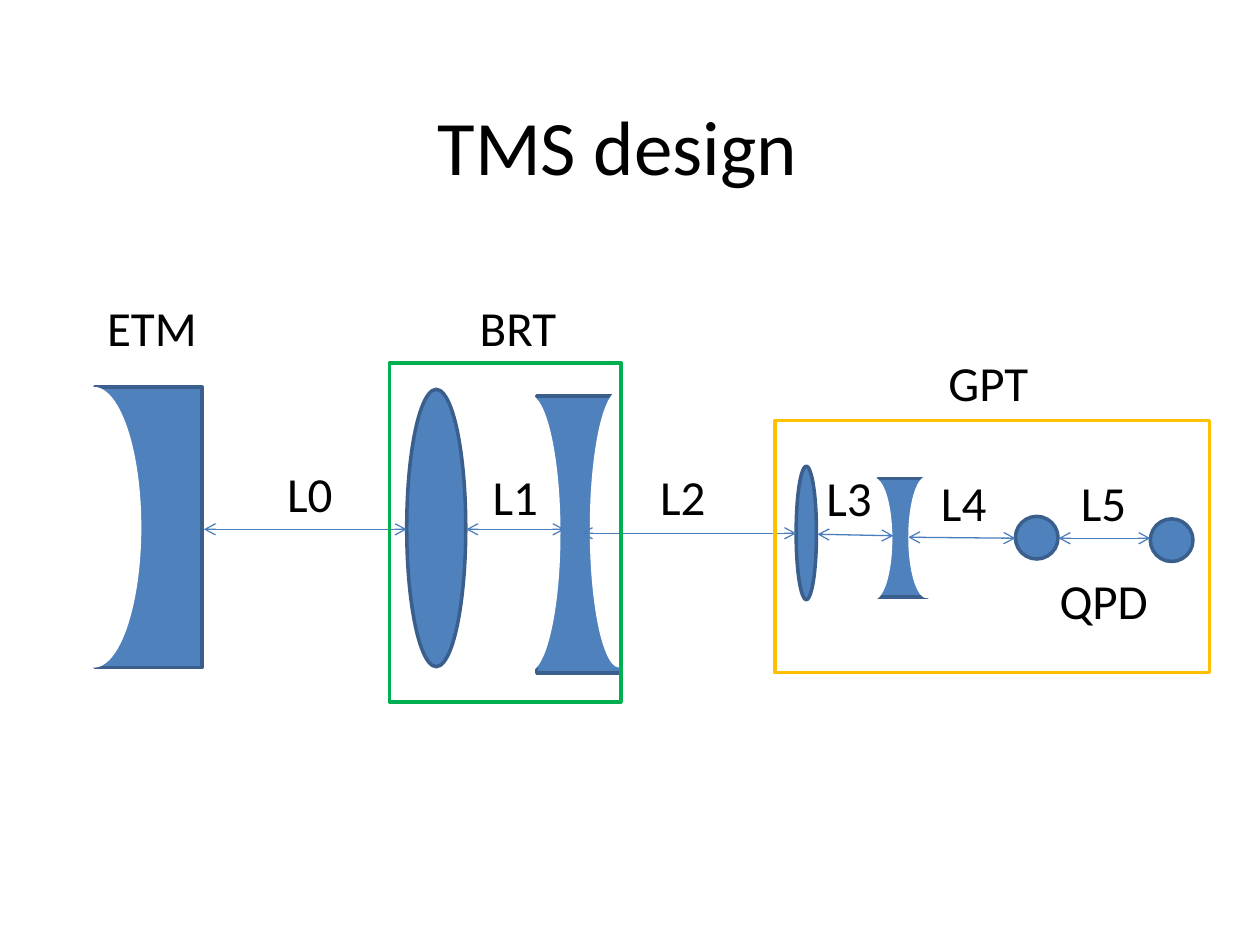
"""Build the TMS design slide: an optical layout with its telescopes and distances."""
from dataclasses import dataclass
from typing import NamedTuple, Optional

from lxml.etree import SubElement
from pptx import Presentation
from pptx.dml.color import RGBColor
from pptx.enum.shapes import MSO_CONNECTOR, MSO_SHAPE as Shape
from pptx.enum.text import MSO_ANCHOR, PP_ALIGN
from pptx.oxml.ns import qn
from pptx.util import Cm, Pt


@dataclass(frozen=True)
class Theme:
    font: str = "Calibri"
    title_size: float = 44
    label_size: float = 28
    outline: float = 2
    arrow_width: float = 0.75
    text: str = "000000"
    background: str = "FFFFFF"
    glass: str = "4F81BD"
    edge: str = "3A5F8C"
    arrow: str = "4B7EBC"
    brt: str = "00B050"
    gpt: str = "FFC000"


class Box(NamedTuple):
    left: float
    top: float
    width: float
    height: float


class Arrow(NamedTuple):
    x1: float
    y1: float
    x2: float
    y2: float


class Label(NamedTuple):
    text: str
    left: float
    top: float
    width: float = 1.45


class Mirror(NamedTuple):
    body: Box
    hollows: tuple[Box, ...]


THEME = Theme()
LABEL_HEIGHT = 1.45
MIRRORS = (
    Mirror(Box(1.91, 7.8, 2.16, 5.66), (Box(0.94, 7.8, 1.91, 5.66),)),
    Mirror(Box(10.82, 7.98, 1.7, 5.59),
           (Box(11.89, 7.87, 1.19, 5.59), Box(10.03, 7.95, 1.27, 5.59))),
    Mirror(Box(17.7, 9.65, 0.99, 2.39),
           (Box(18.31, 9.6, 0.74, 2.46), Box(17.25, 9.63, 0.74, 2.46))),
)
LENSES = (
    Box(8.2, 7.85, 1.19, 5.59),
    Box(16.05, 9.4, 0.41, 2.69),
    Box(20.47, 10.41, 0.86, 0.86),
    Box(23.19, 10.46, 0.86, 0.86),
)
ARROWS = (
    Arrow(4.11, 10.67, 8.2, 10.67),
    Arrow(9.4, 10.67, 11.38, 10.67),
    Arrow(11.71, 10.75, 16.05, 10.75),
    Arrow(16.48, 10.77, 18.01, 10.8),
    Arrow(18.31, 10.83, 20.47, 10.85),
    Arrow(21.34, 10.85, 23.19, 10.85),
)
LABELS = (
    Label("ETM", 1.91, 5.87, 2.34),
    Label("BRT", 9.42, 5.87, 2.08),
    Label("GPT", 18.87, 6.99, 2.13),
    Label("QPD", 21.11, 11.38, 2.31),
    Label("L0", 5.54, 9.22),
    Label("L1", 9.68, 9.27),
    Label("L2", 13.06, 9.27),
    Label("L3", 16.41, 9.3),
    Label("L4", 18.72, 9.4),
    Label("L5", 21.54, 9.4),
)
FRAMES = (
    (Box(7.85, 7.32, 4.67, 6.83), THEME.brt),
    (Box(15.62, 8.48, 8.76, 5.08), THEME.gpt),
)


def add_shape(s, kind: Shape, box: Box, fill: Optional[str], line: Optional[str]) -> None:
    sp = s.shapes.add_shape(kind, *map(Cm, box))
    sp.shadow.inherit = False
    if fill:
        sp.fill.solid()
        sp.fill.fore_color.rgb = RGBColor.from_string(fill)
    else:
        sp.fill.background()
    if line:
        sp.line.color.rgb = RGBColor.from_string(line)
        sp.line.width = Pt(THEME.outline)
    else:
        sp.line.fill.background()


def add_text(s, text: str, box: Box, size: float, wrap: bool = False):
    tf = s.shapes.add_textbox(*map(Cm, box)).text_frame
    tf.word_wrap = wrap
    tf.text = text
    font = tf.paragraphs[0].runs[0].font
    font.name, font.size = THEME.font, Pt(size)
    font.color.rgb = RGBColor.from_string(THEME.text)
    return tf


def add_arrow(s, arrow: Arrow) -> None:
    cxn = s.shapes.add_connector(MSO_CONNECTOR.STRAIGHT, *map(Cm, arrow))
    cxn.line.color.rgb = RGBColor.from_string(THEME.arrow)
    cxn.line.width = Pt(THEME.arrow_width)
    ln = cxn.line._get_or_add_ln()
    for end in ("a:headEnd", "a:tailEnd"):
        SubElement(ln, qn(end), type="arrow")
    SubElement(cxn._element.spPr, qn("a:effectLst"))


def add_mirror(s, mirror: Mirror) -> None:
    add_shape(s, Shape.RECTANGLE, mirror.body, THEME.glass, THEME.edge)
    for hollow in mirror.hollows:
        add_shape(s, Shape.OVAL, hollow, THEME.background, None)


def main() -> None:
    prs = Presentation()
    prs.slide_width, prs.slide_height = Cm(25.4), Cm(19.05)
    s = prs.slides.add_slide(prs.slide_layouts[6])

    tf = add_text(s, "TMS design", Box(1.02, 1.32, 22.86, 3.18), THEME.title_size, True)
    tf.vertical_anchor = MSO_ANCHOR.MIDDLE
    tf.paragraphs[0].alignment = PP_ALIGN.CENTER

    for mirror in MIRRORS:
        add_mirror(s, mirror)
    for lens in LENSES:
        add_shape(s, Shape.OVAL, lens, THEME.glass, THEME.edge)
    for arrow in ARROWS:
        add_arrow(s, arrow)
    for label in LABELS:
        box = Box(label.left, label.top, label.width, LABEL_HEIGHT)
        add_text(s, label.text, box, THEME.label_size)
    for box, color in FRAMES:
        add_shape(s, Shape.RECTANGLE, box, None, color)

    prs.save("out.pptx")


if __name__ == "__main__":
    main()
